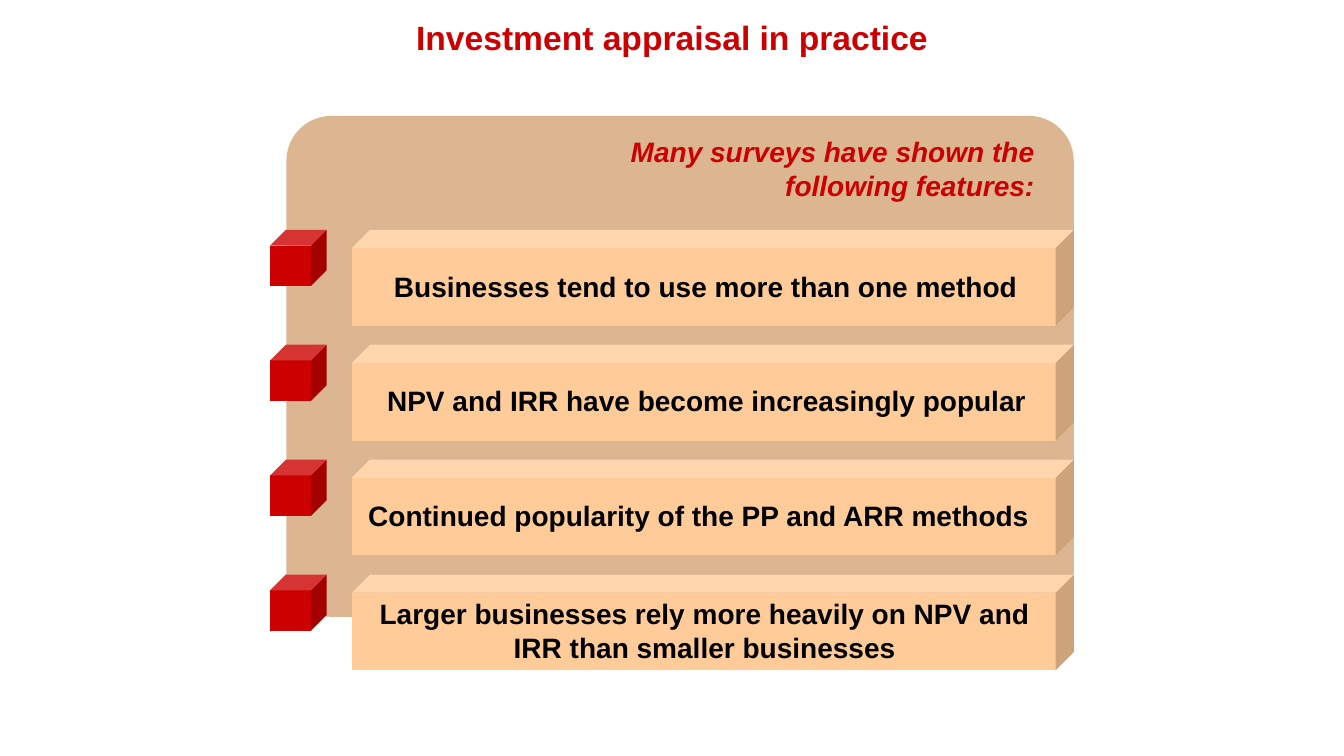
from pptx import Presentation
from pptx import util as u
from pptx.dml.color import RGBColor
from pptx.enum import shapes, text

HUES = {"red": "CC0000", "panel": "DBB691", "bar": "FFCC99", "ink": "000000"}
FONT = "Arial"
PX = 9144
SIZE = (1333, 750)

TITLE = "Investment appraisal in practice"
LEAD = "Many surveys have shown the following features:"
ROWS = [
    ("Businesses tend to use more than one method", 700, 43),
    ("NPV and IRR have become increasingly popular", 701, 43),
    ("Continued popularity of the PP and ARR methods", 693, 43),
    ("Larger businesses rely more heavily on NPV and IRR than smaller businesses", 699, 77),
]
TOP, STEP = 228, 114
MID = 55
WIDE = 700

deck = Presentation()
deck.slide_width, deck.slide_height = [n * PX for n in SIZE]
slide = deck.slides.add_slide(deck.slide_layouts[6])


def scale(box):
    return [int(n * PX) for n in box]


def hue(name):
    return RGBColor.from_string(HUES[name])


def block(kind, box, fill, adj):
    shape = slide.shapes.add_shape(kind, *scale(box))
    shape.shadow.inherit = False
    shape.adjustments[0] = adj
    shape.fill.solid()
    shape.fill.fore_color.rgb = hue(fill)
    shape.line.fill.background()


def label(words, box, size, color, align, slant=False):
    frame = slide.shapes.add_textbox(*scale(box)).text_frame
    frame.word_wrap = True
    para = frame.paragraphs[0]
    para.alignment = align
    run = para.add_run()
    run.text = words
    font = run.font
    font.name, font.size = FONT, u.Pt(size)
    font.bold, font.italic = True, slant
    font.color.rgb = hue(color)


kinds, align = shapes.MSO_SHAPE, text.PP_ALIGN
label(TITLE, (204, 12, 925, 50), 24, "red", align.CENTER)
block(kinds.ROUNDED_RECTANGLE, (284, 115, 781, 497), "panel", 0.09)
label(LEAD, (502, 129, 534, 77), 20, "red", align.RIGHT, True)

for i, (words, mid, high) in enumerate(ROWS):
    top = TOP + i * STEP
    block(kinds.CUBE, (268, top, 56, 56), "red", 0.28)
    block(kinds.CUBE, (349, top, 716, 95), "bar", 0.19)
    box = (mid - WIDE // 2, top + MID - high // 2, WIDE, high)
    label(words, box, 20, "ink", align.CENTER)

deck.save("out.pptx")
